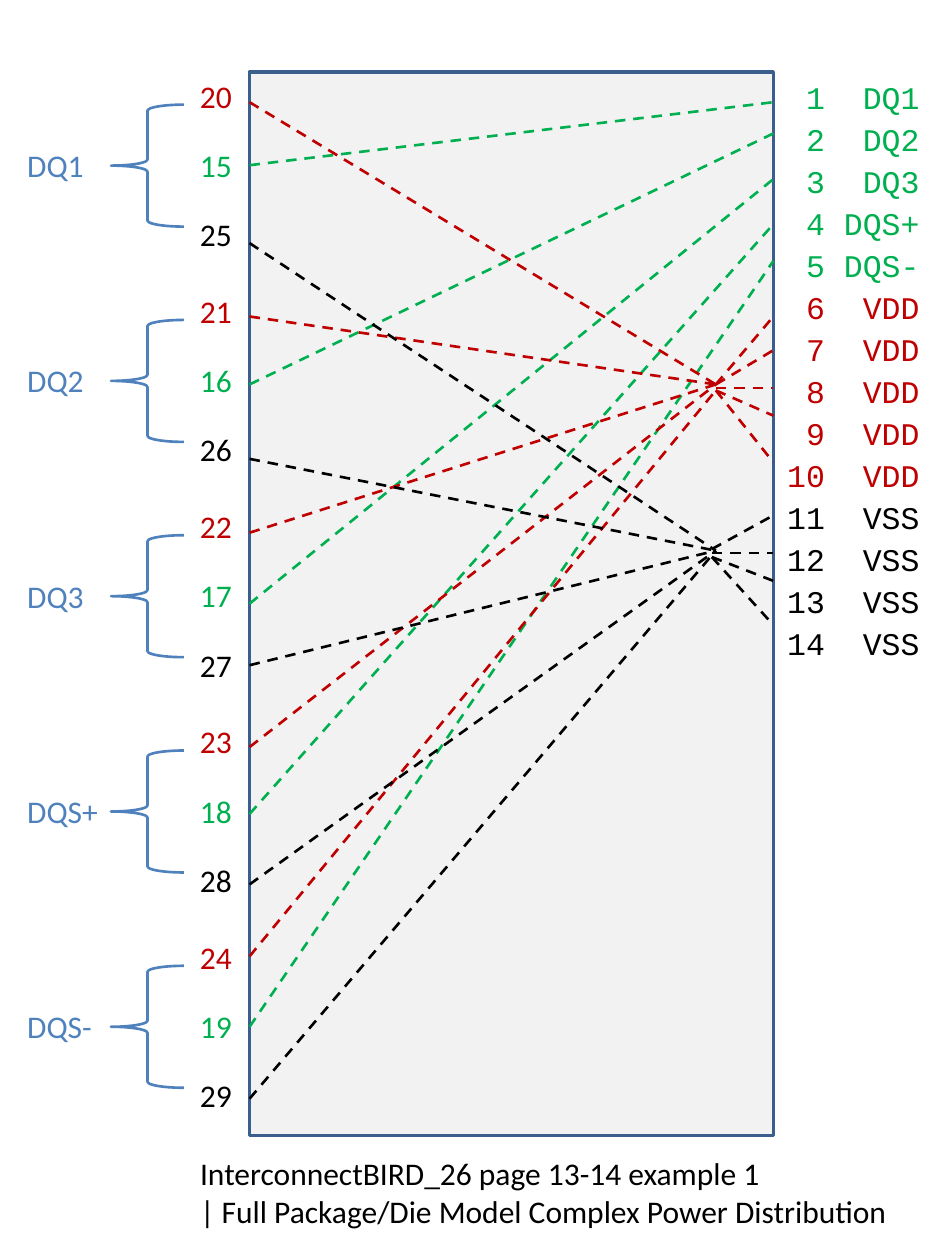
from lxml import etree
from pptx import Presentation
from pptx.dml.color import RGBColor
from pptx.enum.dml import MSO_LINE
from pptx.enum.shapes import MSO_CONNECTOR, MSO_SHAPE
from pptx.enum.text import MSO_ANCHOR, MSO_AUTO_SIZE, PP_ALIGN
from pptx.oxml.ns import qn
from pptx.util import Cm, Pt

DASH = MSO_LINE.DASH
STRAIGHT = MSO_CONNECTOR.STRAIGHT
RECTANGLE, BRACE = MSO_SHAPE.RECTANGLE, MSO_SHAPE.RIGHT_BRACE
LEFT, RIGHT = PP_ALIGN.LEFT, PP_ALIGN.RIGHT

COLORS = {"signal": "00B050", "power": "C00000", "ground": "000000", "text": "000000",
          "group": "4F81BD", "die_fill": "F2F2F2", "die_line": "3A5F8C"}

# Boxes and positions are in centimetres.
DIE_BOX = (5.03, 1.45, 10.56, 21.44)
PIN_BOX = (15.49, 1.45, 3.3, 11.96)
CAPTION_BOX = (3.78, 23.14, 14.5, 1.8)
GROUP_BOX = (0.3, 1.42, 4.65, 3.84)
GROUP_PITCH = 4.34

GROUPS = ["DQ1", "DQ2", "DQ3", "DQS+", "DQS-"]
PINS = ([(name, "signal") for name in GROUPS]
        + [("VDD", "power")] * 5 + [("VSS", "ground")] * 4)
CAPTION = [("InterconnectBIRD_26 page 13-14 example 1", "text"),
           ("| Full Package/Die Model Complex Power Distribution", "text")]

# Heights below the top of the die: (left edge, right edge)
SIGNAL_WIRES = [(1.88, 0.61), (6.3, 1.24), (10.72, 2.16), (14.96, 3.07), (19.25, 3.81)]
# Each rail: wires (left edge, hub), then wires (hub, right edge), with the hub's x
RAILS = {
    "power": {
        "left": (9.4, [(0.61, 6.3), (4.93, 6.3), (9.29, 6.3), (13.61, 6.3), (17.83, 6.42)]),
        "right": (9.4, [(6.3, 4.93), (6.3, 5.61), (6.37, 6.37), (6.42, 6.93), (6.42, 7.87)]),
    },
    "ground": {
        "left": (9.4, [(3.45, 9.65), (7.8, 9.65), (11.96, 9.65), (16.38, 9.65), (20.7, 9.65)]),
        "right": (9.32, [(9.62, 8.94), (9.7, 9.7), (9.78, 10.26), (9.78, 11.15)]),
    },
}


def color(name):
    return RGBColor.from_string(COLORS[name])


def place(shape, box):
    for name, value in zip(("left", "top", "width", "height"), box):
        setattr(shape, name, Cm(value))


def write_lines(shape, lines, font="Calibri", wrap=False, **paragraph_format):
    """Fill a text shape with (text, colour name) paragraphs."""
    frame = shape.text_frame
    frame_format = {"word_wrap": wrap, "auto_size": MSO_AUTO_SIZE.SHAPE_TO_FIT_TEXT,
                    "vertical_anchor": MSO_ANCHOR.TOP}
    for name, value in frame_format.items():
        setattr(frame, name, value)
    paragraph_format = {"alignment": LEFT, "space_before": Pt(0), **paragraph_format}
    for index, (text, color_name) in enumerate(lines):
        paragraph = frame.add_paragraph() if index else frame.paragraphs[0]
        for name, value in paragraph_format.items():
            setattr(paragraph, name, value)
        run = paragraph.add_run()
        run.text = text
        run.font.name, run.font.size = font, Pt(18)
        run.font.color.rgb = color(color_name)


def add_label(slide, box, lines, **paragraph_format):
    shape = slide.shapes.add_textbox(0, 0, 0, 0)
    place(shape, box)
    write_lines(shape, lines, **paragraph_format)


def add_outline(slide, kind, box, line, width):
    shape = slide.shapes.add_shape(kind, *map(Cm, box))
    shape.shadow.inherit = False
    shape.line.color.rgb, shape.line.width = color(line), Pt(width)
    return shape


def add_wire(slide, start, end, color_name):
    wire = slide.shapes.add_connector(STRAIGHT, *map(Cm, start + end))
    wire.line.color.rgb, wire.line.width = color(color_name), Pt(1.5)
    wire.line.dash_style = DASH
    etree.SubElement(wire._element.spPr, qn("a:effectLst"))


def build_die(slide, box):
    left, top, width, _ = box
    die = add_outline(slide, RECTANGLE, box, "die_line", 2)
    die.fill.solid()
    die.fill.fore_color.rgb = color("die_fill")

    def add_wires(heights, start_x, end_x, color_name):
        for start_y, end_y in heights:
            add_wire(slide, (left + start_x, top + start_y),
                     (left + end_x, top + end_y), color_name)

    add_wires(SIGNAL_WIRES, 0, width, "signal")
    for rail, sides in RAILS.items():
        hub_x, heights = sides["left"]
        add_wires(heights, 0, hub_x, rail)
        hub_x, heights = sides["right"]
        add_wires(heights, hub_x, width, rail)


def build_group(slide, box, name, index):
    """Add a group's name, its brace and its power, signal and ground pads."""
    left, top, width, height = box
    add_label(slide, (left, top + 1.4, 2.0, 1.02), [(name, "group")])
    brace = add_outline(slide, BRACE, (left + 1.94, top + 0.69, 1.47, 2.46), "group", 1.5)
    brace.fill.background()
    brace._element.spPr.xfrm.set("flipH", "1")
    pads = [(str(first + index), kind)
            for first, kind in ((20, "power"), (15, "signal"), (25, "ground"))]
    add_label(slide, (left + width - 1.17, top, 1.17, height), pads, space_after=Pt(18))


def build_pin_list(placeholder, box):
    place(placeholder, box)
    lines = [(f"{number}{name:>5}", kind) for number, (name, kind) in enumerate(PINS, 1)]
    write_lines(placeholder, lines, font="Courier New", wrap=True, alignment=RIGHT,
                space_after=Pt(2.4))
    for paragraph in placeholder.text_frame.paragraphs:
        properties = paragraph._p.get_or_add_pPr()
        properties.set("marL", "0")
        properties.set("indent", "0")
        etree.SubElement(properties, qn("a:buNone"))


def build_caption(placeholder, box):
    place(placeholder, box)
    write_lines(placeholder, CAPTION)


def main():
    presentation = Presentation()
    presentation.slide_width, presentation.slide_height = Cm(19.05), Cm(25.4)
    slide = presentation.slides.add_slide(presentation.slide_layouts[1])
    build_die(slide, DIE_BOX)
    left, top, width, height = GROUP_BOX
    for index, name in enumerate(GROUPS):
        build_group(slide, (left, top + index * GROUP_PITCH, width, height), name, index)
    build_pin_list(slide.placeholders[1], PIN_BOX)
    build_caption(slide.shapes.title, CAPTION_BOX)
    presentation.save("out.pptx")


if __name__ == "__main__":
    main()
